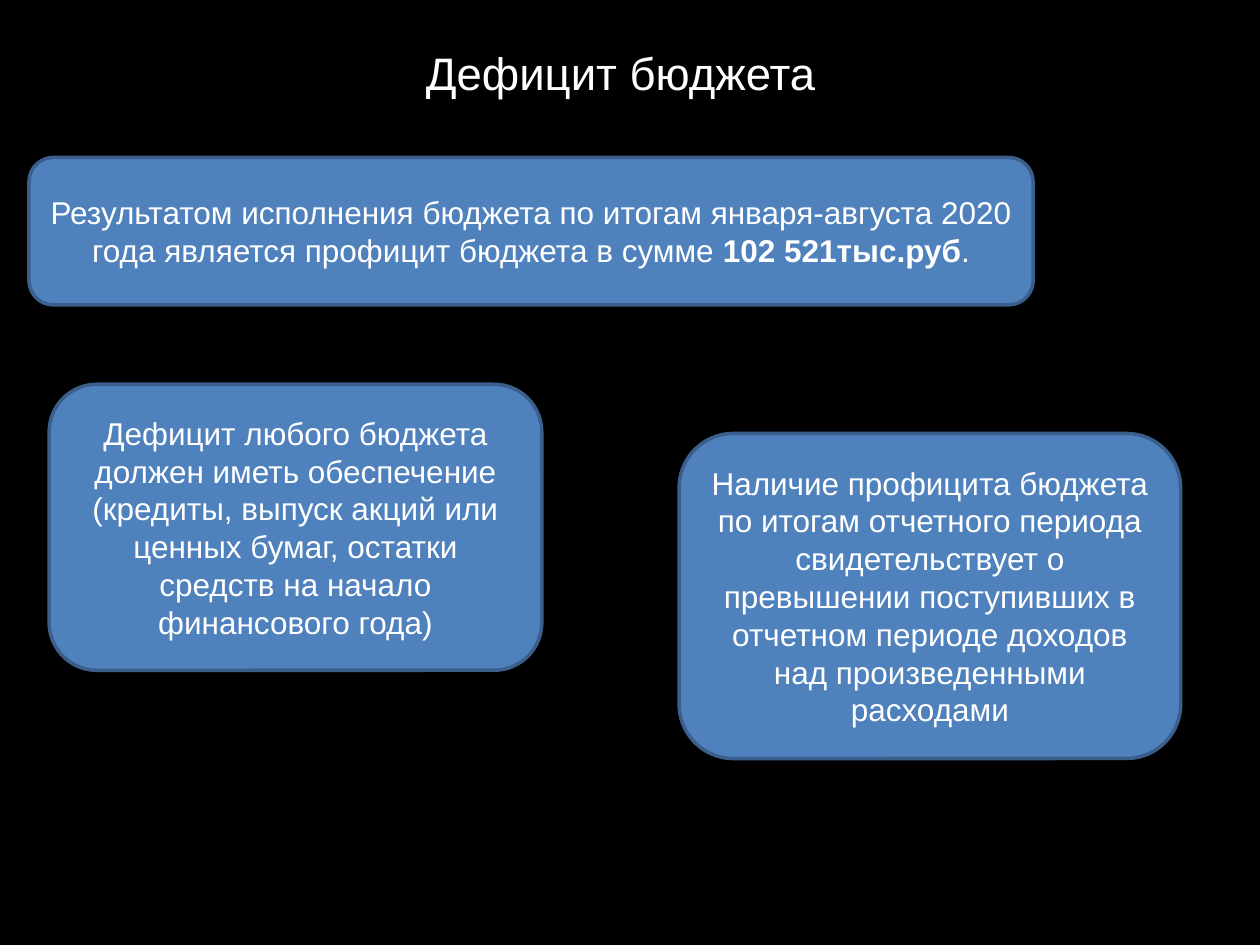
from pptx import Presentation
from pptx.dml.color import RGBColor
from pptx.enum.shapes import MSO_SHAPE
from pptx.enum.text import MSO_ANCHOR, MSO_AUTO_SIZE, PP_ALIGN
from pptx.util import Inches, Pt

# Content: each text is a list of (words, bold)
TITLE = [("Дефицит бюджета", False)]
RESULT = [
    ("Результатом исполнения бюджета по итогам января-августа 2020 года "
     "является профицит бюджета в сумме ", False),
    ("102 521тыс.руб", True),
    (".", False),
]
SURPLUS = [("Наличие профицита бюджета по итогам отчетного периода "
            "свидетельствует о превышении поступивших в отчетном периоде "
            "доходов над произведенными расходами", False)]
DEFICIT = [("Дефицит любого бюджета должен иметь обеспечение (кредиты, "
            "выпуск акций или ценных бумаг, остатки средств на начало "
            "финансового года)", False)]

COLORS = {"back": "000000", "fill": "4F81BD", "line": "3A5F8C", "text": "FFFFFF"}
FONT = "Arial"

# Places in inches: left, top, width, height
HEAD = (3.28, 0.31, 3.91, 0.54)
CARDS = [
    (RESULT, (0.23, 1.25, 7.97, 1.17)),
    (SURPLUS, (5.39, 3.44, 3.98, 2.58)),
    (DEFICIT, (0.39, 3.05, 3.91, 2.27)),
]


def color(name):
    return RGBColor.from_string(COLORS[name])


def write(shape, runs, size=18, align=PP_ALIGN.CENTER, anchor=MSO_ANCHOR.MIDDLE,
          fit=MSO_AUTO_SIZE.NONE):
    frame = shape.text_frame
    frame.word_wrap = True
    frame.auto_size = fit
    frame.vertical_anchor = anchor
    para = frame.paragraphs[0]
    para.alignment = align
    for words, bold in runs:
        run = para.add_run()
        run.text = words
        run.font.name = FONT
        run.font.size = Pt(size)
        run.font.bold = bold
        run.font.color.rgb = color("text")


def main():
    deck = Presentation()
    deck.slide_width, deck.slide_height = Inches(10), Inches(7.5)
    slide = deck.slides.add_slide(deck.slide_layouts[5])
    slide.background.fill.solid()
    slide.background.fill.fore_color.rgb = color("back")

    # Title
    title = slide.shapes.title
    title.left, title.top, title.width, title.height = map(Inches, HEAD)
    write(title, TITLE, size=26, align=PP_ALIGN.LEFT, anchor=MSO_ANCHOR.TOP,
          fit=MSO_AUTO_SIZE.SHAPE_TO_FIT_TEXT)

    # Rounded cards
    for runs, place in CARDS:
        card = slide.shapes.add_shape(MSO_SHAPE.ROUNDED_RECTANGLE,
                                      *map(Inches, place))
        card.shadow.inherit = False
        card.fill.solid()
        card.fill.fore_color.rgb = color("fill")
        card.line.color.rgb = color("line")
        card.line.width = Pt(2)
        write(card, runs)

    deck.save("out.pptx")


if __name__ == "__main__":
    main()
